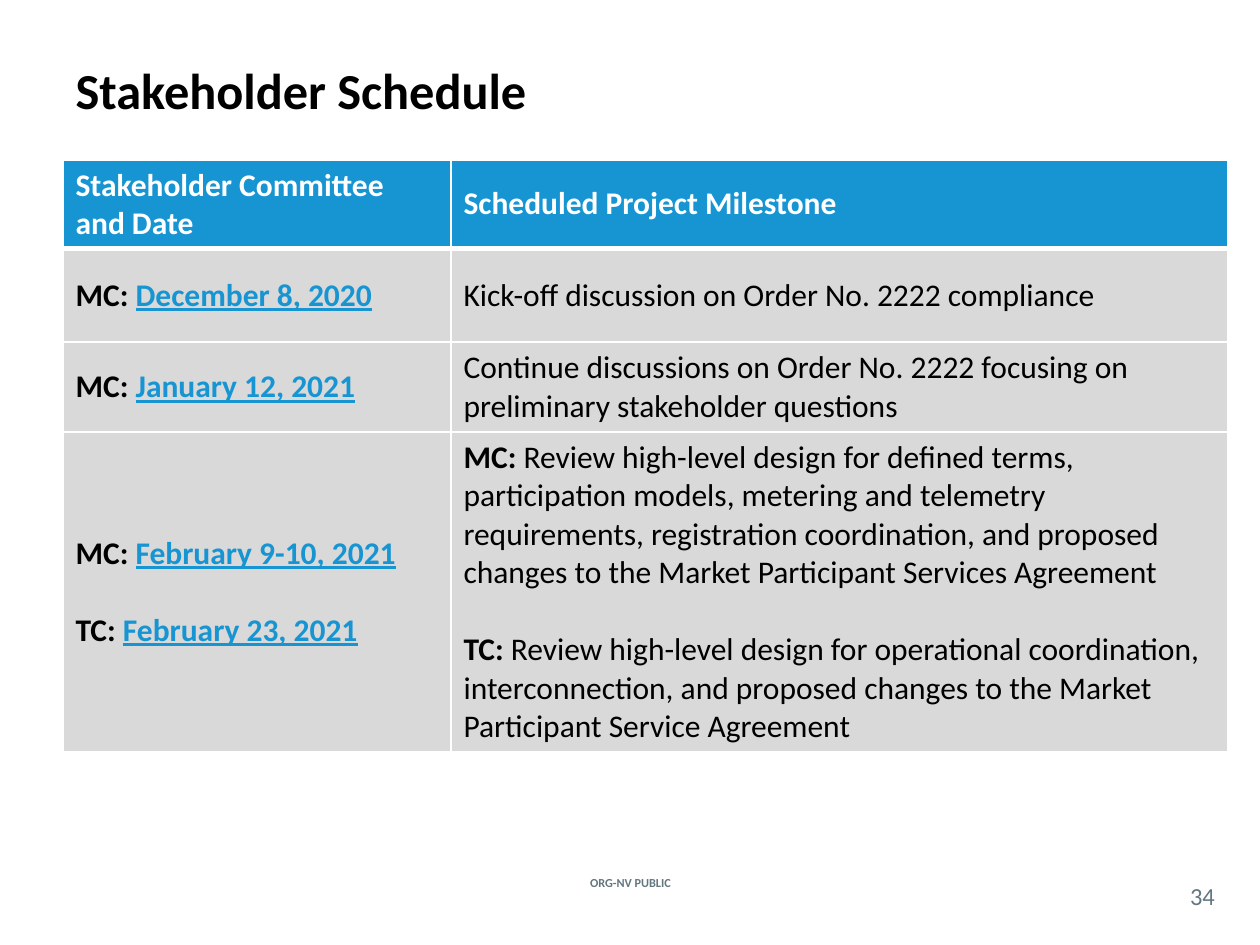
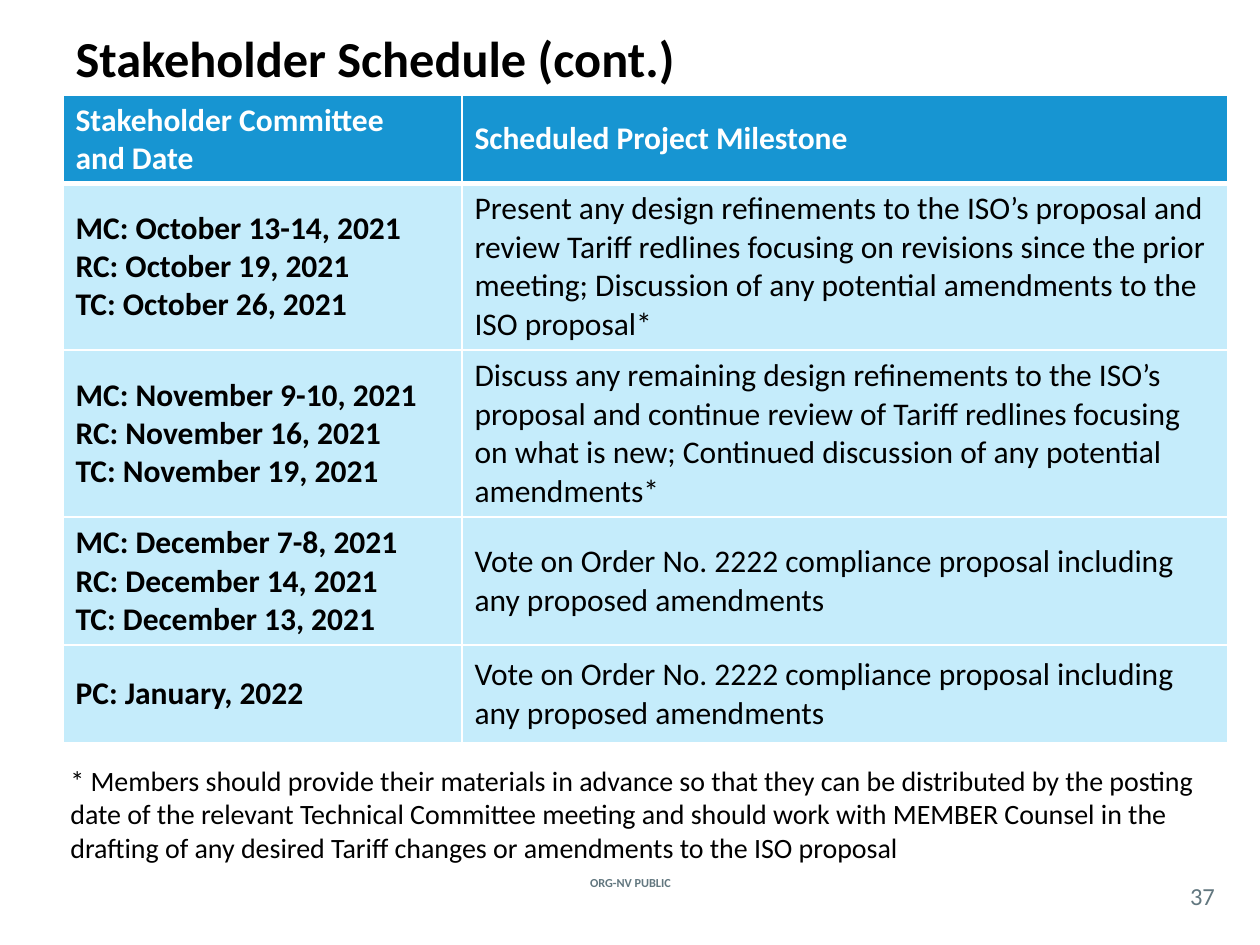
from dataclasses import dataclass

import pptx
import pptx.dml.color
import pptx.enum.text
import pptx.oxml
import pptx.oxml.ns
import pptx.util

EMU_PER_PX = 914400 / 126
FONT = "Calibri"
BLUE, PALE_BLUE, GREY = "1795D2", "C5ECFB", "D9D9D9"
BLACK, WHITE, SLATE = "000000", "FFFFFF", "62777F"
CENTER = pptx.enum.text.PP_ALIGN.CENTER
LEFT = pptx.enum.text.PP_ALIGN.LEFT
MIDDLE = pptx.enum.text.MSO_ANCHOR.MIDDLE
TOP = pptx.enum.text.MSO_ANCHOR.TOP


@dataclass(frozen=True)
class Span:
    text: str
    bold: bool = False
    color: str = BLACK
    underline: bool = False


Line = tuple[Span, ...]
Lines = list[Line]


@dataclass(frozen=True)
class Row:
    height: int
    committee: Lines
    milestone: Lines
    gap: float = 0  # points between paragraphs


@dataclass(frozen=True)
class Schedule:
    title: str
    title_top: int
    number: str
    table_top: int
    columns: tuple[int, int]
    header: list[str]
    fill: str
    rows: list[Row]
    note: str = ""


def px(length: float) -> pptx.util.Emu:
    return pptx.util.Emu(round(length * EMU_PER_PX))


def rgb(color: str) -> pptx.dml.color.RGBColor:
    return pptx.dml.color.RGBColor.from_string(color)


# Text builders
def bold_lines(*texts: str, color: str = BLACK) -> Lines:
    return [(Span(text, True, color),) for text in texts]


def plain(text: str) -> Lines:
    return [(Span(text),)]


def linked(committee: str, date: str) -> Line:
    return Span(f"{committee}: ", True), Span(date, True, BLUE, True)


def labelled(committee: str, text: str) -> Line:
    return Span(f"{committee}: ", True), Span(text)


def write(frame, lines: Lines, size: float, align=LEFT, gap: float = 0) -> None:
    for index, line in enumerate(lines):
        para = frame.paragraphs[0] if index == 0 else frame.add_paragraph()
        para.alignment = align
        if index and gap:
            para.space_before = pptx.util.Pt(gap)
        for span in line:
            run = para.add_run()
            run.text = span.text
            run.font.name = FONT
            run.font.size = pptx.util.Pt(size)
            run.font.bold = span.bold
            run.font.underline = span.underline
            run.font.color.rgb = rgb(span.color)


def place(shape, left: int, top: int, width: int, height: int) -> None:
    shape.left, shape.top, shape.width, shape.height = map(px, (left, top, width, height))


def add_text(page, area: tuple[int, int, int, int], span: Span, size: float,
             align=LEFT, anchor=MIDDLE, inset: bool = True) -> None:
    box = page.shapes.add_textbox(*map(px, area))
    frame = box.text_frame
    frame.word_wrap = True
    frame.vertical_anchor = anchor
    if not inset:
        frame.margin_left = frame.margin_right = frame.margin_top = frame.margin_bottom = 0
    write(frame, [(span,)], size, align)


# Table parts
def set_borders(cell, top: int, bottom: int) -> None:
    properties = cell._tc.get_or_add_tcPr()
    namespace = pptx.oxml.ns.nsdecls("a")
    widths = {"lnL": 1, "lnR": 1, "lnT": top, "lnB": bottom}
    for index, (side, points) in enumerate(widths.items()):
        properties.insert(index, pptx.oxml.parse_xml(
            f'<a:{side} {namespace} w="{pptx.util.Pt(points)}"><a:solidFill>'
            f'<a:srgbClr val="{WHITE}"/></a:solidFill></a:{side}>'))


def fill_cell(cell, lines: Lines, fill: str, gap: float, top: int, bottom: int) -> None:
    cell.fill.solid()
    cell.fill.fore_color.rgb = rgb(fill)
    cell.vertical_anchor = MIDDLE
    write(cell.text_frame, lines, 18, gap=gap)
    set_borders(cell, top, bottom)


def add_schedule_table(page, schedule: Schedule) -> None:
    header = Row(88, bold_lines(*schedule.header, color=WHITE),
                 bold_lines("Scheduled Project Milestone", color=WHITE))
    rows = [header, *schedule.rows]
    table = page.shapes.add_table(
        len(rows), 2, px(63), px(schedule.table_top),
        px(sum(schedule.columns)), px(sum(row.height for row in rows))).table
    table.first_row = table.horz_banding = False
    for column, width in zip(table.columns, schedule.columns):
        column.width = px(width)
    for index, row in enumerate(rows):
        table.rows[index].height = px(row.height)
        for column, lines in enumerate((row.committee, row.milestone)):
            fill_cell(table.cell(index, column), lines,
                      schedule.fill if index else BLUE, row.gap,
                      top=3 if index == 1 else 1, bottom=1 if index else 3)


def add_page(deck, schedule: Schedule) -> None:
    page = deck.slides.add_slide(deck.slide_layouts[5])
    # Title
    title = page.shapes.title
    place(title, 63, schedule.title_top, 1134, 73)
    title.text_frame.word_wrap = True
    title.text_frame.auto_size = pptx.enum.text.MSO_AUTO_SIZE.NONE
    title.text_frame.vertical_anchor = MIDDLE
    write(title.text_frame, bold_lines(schedule.title), 28.8)
    # Footer
    add_text(page, (538, 851, 185, 63), Span("ORG-NV PUBLIC", True, SLATE), 7, CENTER)
    add_text(page, (1176, 877, 53, 37), Span(schedule.number, color=SLATE), 14,
             CENTER, inset=False)
    # Body
    add_schedule_table(page, schedule)
    if schedule.note:
        add_text(page, (58, 757, 1166, 115), Span(schedule.note), 16, anchor=TOP)


VOTE = "Vote on Order No. 2222 compliance proposal including any proposed amendments"

SCHEDULES = [
    Schedule(
        "Stakeholder Schedule", 53, "34", 160, (388, 777),
        ["Stakeholder Committee and Date"], GREY,
        [
            Row(94, [linked("MC", "December 8, 2020")],
                plain("Kick-off discussion on Order No. 2222 compliance")),
            Row(90, [linked("MC", "January 12, 2021")],
                plain("Continue discussions on Order No. 2222 focusing on "
                      "preliminary stakeholder questions")),
            Row(320, [linked("MC", "February 9-10, 2021"), linked("TC", "February 23, 2021")],
                [labelled("MC", "Review high-level design for defined terms, participation "
                          "models, metering and telemetry requirements, registration "
                          "coordination, and proposed changes to the Market Participant "
                          "Services Agreement"),
                 labelled("TC", "Review high-level design for operational coordination, "
                          "interconnection, and proposed changes to the Market Participant "
                          "Service Agreement")], gap=22),
        ]),
    Schedule(
        "Stakeholder Schedule (cont.)", 21, "37", 95, (399, 766),
        ["Stakeholder Committee", "and Date"], PALE_BLUE,
        [
            Row(167, bold_lines("MC: October 13-14, 2021", "RC: October 19, 2021",
                                "TC: October 26, 2021"),
                plain("Present any design refinements to the ISO’s proposal and review Tariff "
                      "redlines focusing on revisions since the prior meeting; Discussion of "
                      "any potential amendments to the ISO proposal*")),
            Row(167, bold_lines("MC: November 9-10, 2021", "RC: November 16, 2021",
                                "TC: November 19, 2021"),
                plain("Discuss any remaining design refinements to the ISO’s proposal and "
                      "continue review of Tariff redlines focusing on what is new; Continued "
                      "discussion of any potential amendments*")),
            Row(128, bold_lines("MC: December 7-8, 2021", "RC: December 14, 2021",
                                "TC: December 13, 2021"), plain(VOTE)),
            Row(98, bold_lines("PC: January, 2022"), plain(VOTE)),
        ],
        "* Members should provide their materials in advance so that they can be distributed "
        "by the posting date of the relevant Technical Committee meeting and should work with "
        "MEMBER Counsel in the drafting of any desired Tariff changes or amendments to the "
        "ISO proposal"),
]


def main() -> None:
    deck = pptx.Presentation()
    deck.slide_width, deck.slide_height = px(1260), px(945)
    for schedule in SCHEDULES:
        add_page(deck, schedule)
    deck.save("out.pptx")


if __name__ == "__main__":
    main()
